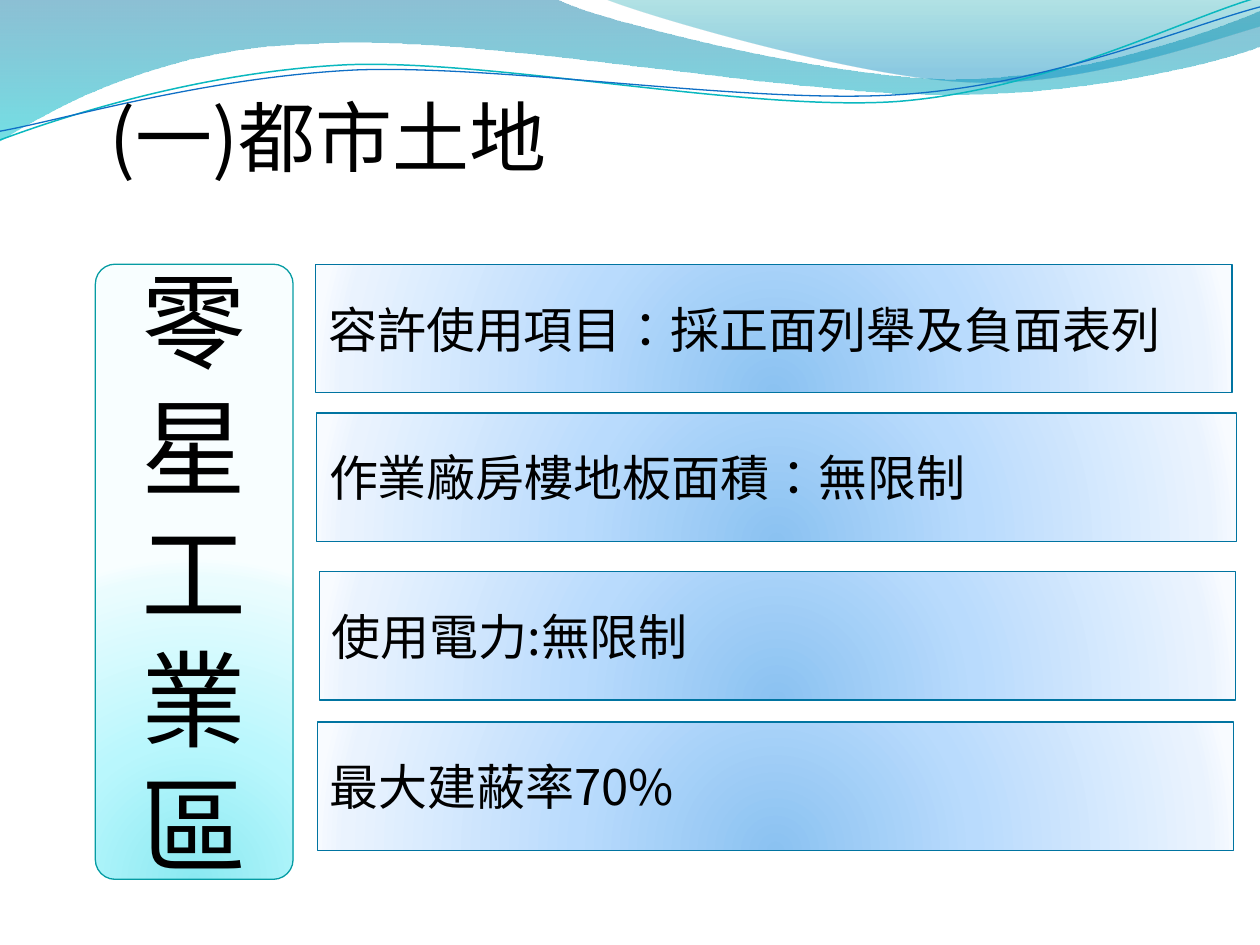
"""Build the slide on scattered industrial zones within urban land."""
import math

import lxml.etree
import pptx
import pptx.dml.color
import pptx.enum.shapes
import pptx.enum.text
import pptx.oxml
import pptx.oxml.ns
import pptx.util

Pt = pptx.util.Pt
RGBColor = pptx.dml.color.RGBColor
Shape = pptx.enum.shapes.MSO_SHAPE
Anchor = pptx.enum.text.MSO_ANCHOR
Align = pptx.enum.text.PP_ALIGN
qn = pptx.oxml.ns.qn

FONT = "Noto Sans CJK SC"
BLACK = RGBColor(0x00, 0x00, 0x00)
DEEP_BLUE = RGBColor(0x00, 0x74, 0xA1)
SKY_BLUE = RGBColor(0x00, 0x8B, 0xBF)
AQUA = RGBColor(0x00, 0xC6, 0xCF)
SEA_GREEN = RGBColor(0x00, 0xA1, 0xA9)
WAVE_TEAL = RGBColor(0x0A, 0xB8, 0xBF)
WAVE_BLUE = RGBColor(0x0F, 0x6F, 0xC6)
COLUMN_LINE = RGBColor(0x06, 0x9C, 0xA3)
COLUMN_GLOW = [
    (0, RGBColor(0x8B, 0xE9, 0xF1), 100), (43, RGBColor(0xB9, 0xF7, 0xFD), 100),
    (93, RGBColor(0xEA, 0xFC, 0xFE), 100), (100, RGBColor(0xF8, 0xFE, 0xFF), 100)]
BOX_GLOW = [
    (0, RGBColor(0x8B, 0xC2, 0xF1), 100), (43, RGBColor(0xB9, 0xDB, 0xFD), 100),
    (93, RGBColor(0xEA, 0xF3, 0xFE), 100), (100, RGBColor(0xF8, 0xFB, 0xFF), 100)]
DOWNWARD = '<a:lin ang="5400000" scaled="0"/>'
FROM_BELOW = ('<a:path path="circle"><a:fillToRect l="50000" t="130000" '
              'r="50000" b="-30000"/></a:path>')
WAVE_TILT = -2.7
WAVE_CENTER = (360, 42)


def fill_gradient(shape, stops, direction):
    stop_xml = "".join(
        f'<a:gs pos="{position * 1000}"><a:srgbClr val="{color}">'
        f'<a:alpha val="{opacity * 1000}"/></a:srgbClr></a:gs>'
        for position, color, opacity in stops)
    gradient = pptx.oxml.parse_xml(
        f'<a:gradFill {pptx.oxml.ns.nsdecls("a")} rotWithShape="1">'
        f'<a:gsLst>{stop_xml}</a:gsLst>{direction}</a:gradFill>')
    shape.fill.background()
    properties = shape.fill._xPr
    properties.replace(properties.find(qn("a:noFill")), gradient)


def add_curve(shapes, start, segments, closed, tilt=0):
    cosine, sine = math.cos(math.radians(-tilt)), math.sin(math.radians(-tilt))
    center_x, center_y = WAVE_CENTER
    vertices = []
    for segment in [start, *segments]:
        for x, y in zip(segment[::2], segment[1::2]):
            dx, dy = x - center_x, y - center_y
            vertices.append((Pt(center_x + dx * cosine - dy * sine),
                             Pt(center_y + dx * sine + dy * cosine)))
    builder = shapes.build_freeform(*vertices[0])
    builder.add_line_segments(vertices[1:], close=closed)
    shape = builder.convert_to_shape()
    lines = iter(list(shape._element.iter(qn("a:lnTo"))))
    for segment in segments:
        first = next(lines)
        if len(segment) == 6:
            first.tag = qn("a:cubicBezTo")
            for line in (next(lines), next(lines)):
                first.append(line[0])
                line.getparent().remove(line)
    shape.rotation = tilt
    shape.shadow.inherit = False
    return shape


presentation = pptx.Presentation()
presentation.slide_width = Pt(720)
presentation.slide_height = Pt(540)
slide = presentation.slides.add_slide(presentation.slide_layouts[6])
shapes = slide.shapes

bands = [
    ((0, 0), [(317, -1), (343, 12, 478, 45, 546, 45), (614, 45, 690, 19, 720, 6),
              (721, 26), (708, 32, 626, 55, 537, 54), (447, 54, 275, 20, 185, 24.5),
              (93, 26, 33, 60, -1, 81)],
     [(0, DEEP_BLUE, 45), (100, AQUA, 55)]),
    ((345, -1), [(366, 8, 491, 45, 554, 47), (616, 50, 692, 23, 720, 15), (720, 0)],
     [(0, SEA_GREEN, 30), (80, SKY_BLUE, 45)]),
]
for start, segments, stops in bands:
    band = add_curve(shapes, start, segments, True)
    fill_gradient(band, stops, DOWNWARD)
    band.line.fill.background()

waves = [
    ((0, 80), [(35, 67, 114, 41, 199, 37), (284, 34, 427, 64, 513, 58),
               (600, 51, 675, 11, 719, -1.5)], WAVE_TEAL, 0.85),
    ((0, 75), [(34, 69, 118, 44, 204, 40), (290, 37, 430, 60, 516, 54),
               (602, 48, 678, 15, 720, 4)], WAVE_BLUE, 0.75),
]
for start, segments, color, width in waves:
    wave = add_curve(shapes, start, segments, False, WAVE_TILT)
    wave.fill.background()
    wave.line.color.rgb = color
    wave.line.width = Pt(width)

title = shapes.add_textbox(Pt(55.4), Pt(47.5), Pt(636), Pt(493))
texts = [(title, ["(一)都市土地"], 44, Align.LEFT, Anchor.TOP)]

panels = [
    (Shape.ROUNDED_RECTANGLE, 54.5, 151, 113, 351.5, COLUMN_GLOW, COLUMN_LINE,
     ["零星工業", "區"], 60, Align.CENTER),
]
boxes = [
    (180.5, 151, 523.5, "容許使用項目：採正面列舉及負面表列"),
    (181, 236, 525.5, "作業廠房樓地板面積：無限制"),
    (182.5, 326.5, 523.5, "使用電力:無限制"),
    (181.5, 412.5, 523.5, "最大建蔽率70%"),
]
for left, top, width, text in boxes:
    panels.append((Shape.RECTANGLE, left, top, width, 73.5, BOX_GLOW, DEEP_BLUE,
                   [text], 28, Align.LEFT))

for kind, left, top, width, height, glow, line_color, lines, size, alignment in panels:
    panel = shapes.add_shape(kind, Pt(left), Pt(top), Pt(width), Pt(height))
    if kind == Shape.ROUNDED_RECTANGLE:
        panel.adjustments[0] = 0.1
    panel.shadow.inherit = False
    fill_gradient(panel, glow, FROM_BELOW)
    panel.line.color.rgb = line_color
    panel.line.width = Pt(0.75)
    texts.append((panel, lines, size, alignment, Anchor.MIDDLE))

for shape, lines, size, alignment, anchor in texts:
    frame = shape.text_frame
    frame.word_wrap = True
    frame.vertical_anchor = anchor
    frame.text = "\n".join(lines)
    for paragraph in frame.paragraphs:
        paragraph.alignment = alignment
        paragraph.font.size = Pt(size)
        paragraph.font.name = FONT
        paragraph.font.color.rgb = BLACK
        east_asian = lxml.etree.SubElement(paragraph.font._rPr, qn("a:ea"))
        east_asian.set("typeface", FONT)
        for run in paragraph.runs:
            run.font._element.set("lang", "zh-TW") if hasattr(run.font, "_element") else run.font._rPr.set("lang", "zh-TW")

presentation.save("out.pptx")
